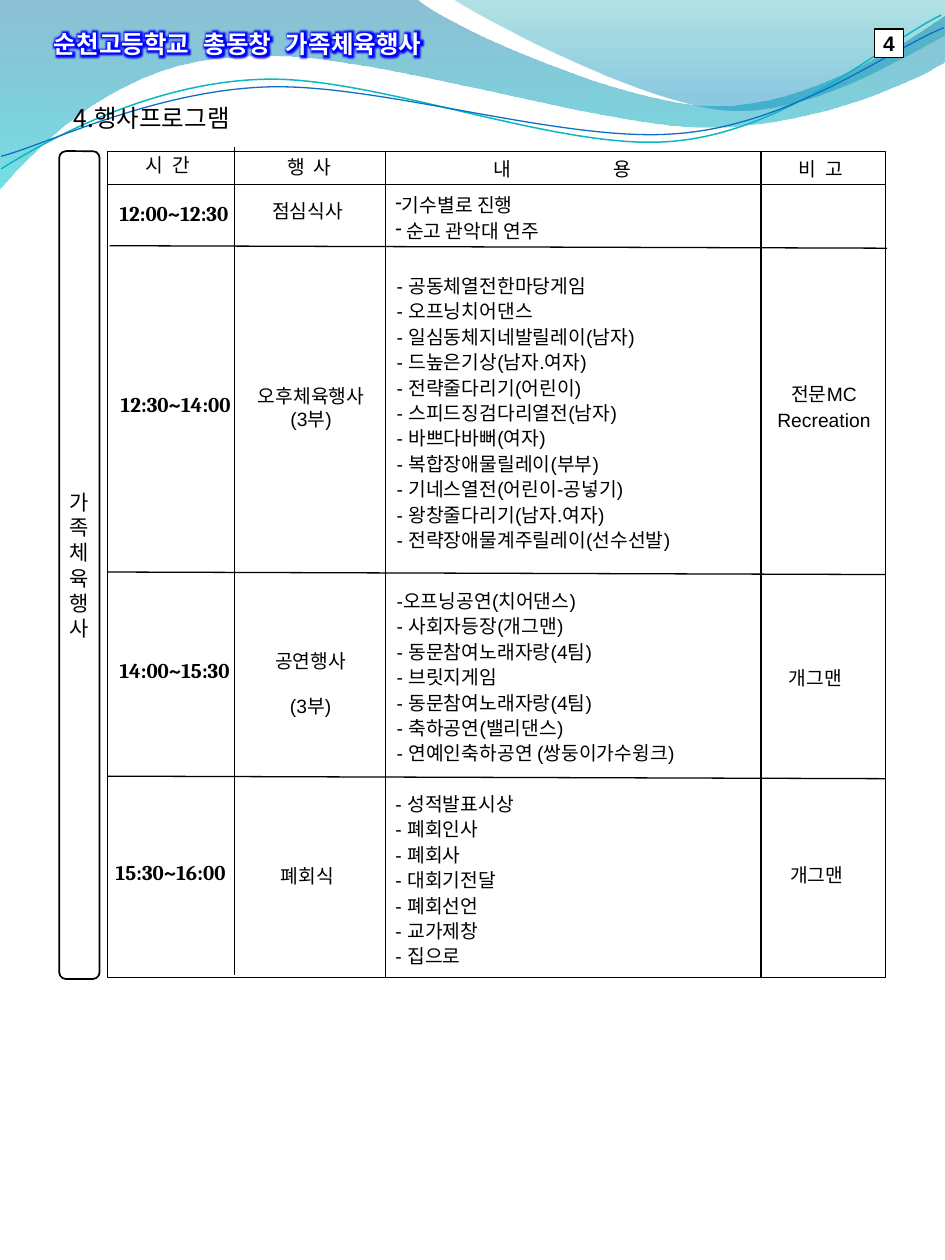
from copy import deepcopy
from dataclasses import dataclass

from lxml.etree import SubElement
from pptx import Presentation
from pptx.dml.color import RGBColor
from pptx.enum.shapes import MSO_CONNECTOR as Connector, MSO_SHAPE as Shape
from pptx.enum.text import MSO_ANCHOR as Anchor, PP_ALIGN as Align
from pptx.oxml import parse_xml
from pptx.oxml.ns import nsdecls, qn
from pptx.util import Inches, Pt


@dataclass(frozen=True)
class Theme:
    """Colours, fonts and type sizes of the programme page."""
    black: str = "000000"
    white: str = "FFFFFF"
    glow: str = "0000FF"
    teal: str = "0AB8BF"
    blue: str = "0F6FC6"
    sans: str = "Arial"
    serif: str = "Cambria"
    hangul: str = "Noto Sans CJK KR"
    side: str = "Lato"
    title: float = 14
    label: float = 12
    body: float = 11
    loose: float = 1.1


THEME = Theme()

BANDS = [
    ([(0, -0.01), [(3.3, -0.01)], [(3.57, 0.22), (4.98, 0.84), (5.69, 0.84)],
      [(6.4, 0.84), (7.19, 0.34), (7.5, 0.12)], [(7.51, 0.48)],
      [(7.38, 0.58), (6.52, 1.01), (5.59, 1.01)],
      [(4.66, 1), (2.86, 0.37), (1.93, 0.45)],
      [(0.97, 0.47), (0.34, 1.11), (-0.01, 1.51)], [(0, -0.01)]],
     [(0, "0074A1", 45), (1, "00C6CF", 55)]),
    ([(3.59, -0.01), [(3.82, 0.15), (5.11, 0.82), (5.77, 0.87)],
      [(6.42, 0.92), (7.21, 0.43), (7.5, 0.28)], [(7.5, 0)], [(3.59, -0.01)]],
     [(0, "00A1A9", 30), (0.8, "008BBF", 45)]),
]

WAVES = [
    ([(0.01, 1.34), [(0.36, 1.12), (1.18, 0.66), (2.07, 0.63)],
      [(2.96, 0.59), (4.45, 1.21), (5.35, 1.12)],
      [(6.26, 1.04), (7.03, 0.33), (7.47, 0.12)]], THEME.teal, 0.85),
    ([(0.01, 1.24), [(0.36, 1.15), (1.22, 0.72), (2.12, 0.69)],
      [(3.02, 0.66), (4.49, 1.14), (5.38, 1.06)],
      [(6.28, 0.99), (7.05, 0.4), (7.49, 0.22)]], THEME.blue, 0.75),
]

RULES = [((0, 0.26), (6.18, 0.26), 0.25), ((0.02, 0.75), (6.19, 0.77), 0.75),
         ((0, 3.34), (6.18, 3.36), 0.75), ((0, 4.96), (6.18, 4.98), 0.75),
         ((1.01, -0.03), (1.01, 6.54), 0.75), ((2.21, 0), (2.21, 6.56), 0.75),
         ((5.19, 0), (5.19, 6.56), 0.75)]
HEADERS = [((0.21, -0.03, 0.63, 0.29), "시 간", 2.6, None),
           ((1.33, -0.02, 0.63, 0.29), "행 사", 2.6, None),
           ((2.97, -0.02, 1.94, 0.31), "내 용", 56, THEME.loose),
           ((5.39, -0.02, 0.63, 0.31), "비 고", 2.6, THEME.loose)]
TIMES = [((0, 0.34), "12:00~12:30"), ((0.01, 1.86), "12:30~14:00"),
         ((0, 3.97), "14:00~15:30"), ((-0.03, 5.57), "15:30~16:00")]
NOTES = [((1.13, 0.33, 1.28, 0.29), "점심식사", 0.18, None),
         ((1.2, 5.61, 1.28, 0.29), "폐회식", 0.18, None),
         ((5.19, 4.02, 1.28, 0.52), "개그맨", 0.22, THEME.loose),
         ((5.2, 5.58, 1.28, 0.52), "개그맨", 0.22, THEME.loose)]
CONTENTS = [
    ((2.2, 0.91, 3.28, 3.22),
     "- 공동체열전한마당게임\n- 오프닝치어댄스\n- 일심동체지네발릴레이(남자)\n"
     "- 드높은기상(남자.여자)\n- 전략줄다리기(어린이)\n- 스피드징검다리열전(남자)\n"
     "- 바쁘다바뻐(여자)\n- 복합장애물릴레이(부부)\n- 기네스열전(어린이-공넣기)\n"
     "- 왕창줄다리기(남자.여자)\n- 전략장애물계주릴레이(선수선발)"),
    ((2.2, 3.41, 3.28, 1.56),
     "-오프닝공연(치어댄스)\n- 사회자등장(개그맨)\n- 동문참여노래자랑(4팀)\n"
     "- 브릿지게임\n- 동문참여노래자랑(4팀)\n- 축하공연(밸리댄스)\n"
     "- 연예인축하공연 (쌍둥이가수윙크)"),
    ((2.19, 5.02, 3.28, 1.77),
     "- 성적발표시상\n- 폐회인사\n- 폐회사\n- 대회기전달\n- 폐회선언\n- 교가제창\n- 집으로"),
]


def apply(target, **values):
    """Set each named attribute on the target."""
    for name, value in values.items():
        setattr(target, name, value)


def write(frame, lines, size=THEME.body, font=THEME.sans, color=THEME.black,
          bold=False, align=Align.LEFT, leading=None, gap=0):
    """Write one paragraph per entry, widening its spaces by the gap."""
    for index, line in enumerate(lines):
        para = frame.paragraphs[0] if index == 0 else frame.add_paragraph()
        apply(para, alignment=align, line_spacing=leading)
        if gap:
            for part in line.replace(" ", "| |").split("|"):
                para.add_run().text = part
        else:
            para.text = line
        for span in para.runs:
            apply(span.font, size=Pt(size), name=font, bold=bold)
            span.font.color.rgb = RGBColor.from_string(color)
            if gap and span.text == " ":
                span.font._element.set("spc", str(round(gap * 100)))
        for line_break in para._p.findall(qn("a:br")):
            line_break.append(deepcopy(para.runs[0].font._element))
    return frame.paragraphs


def outline(shape, color, width):
    """Give a shape a plain line and no shadow."""
    shape.shadow.inherit = False
    shape.line.color.rgb = RGBColor.from_string(color)
    shape.line.width = Pt(width)


def trace(page, steps):
    """Draw straight and Bezier steps as one freeform."""
    start, *segments = steps
    points = [(Inches(x), Inches(y)) for segment in segments for x, y in segment]
    builder = page.shapes.build_freeform(*map(Inches, start))
    builder.add_line_segments(points, close=steps[-1][-1] == start)
    shape = builder.convert_to_shape()
    nodes = iter(shape._element.xpath(".//a:path/a:lnTo"))
    for segment in segments:
        group = [next(nodes) for _ in segment]
        if len(group) == 3:
            curve = parse_xml(f'<a:cubicBezTo {nsdecls("a")}/>')
            group[0].addprevious(curve)
            for node in group:
                curve.append(node[0])
                node.getparent().remove(node)
    shape.shadow.inherit = False
    return shape


def add_backdrop(page):
    """Draw the translucent bands and the two wave lines."""
    for steps, stops in BANDS:
        band = trace(page, steps)
        band.line.fill.background()
        band.fill.gradient()
        band.fill.gradient_angle = 270
        for stop, (position, color, _) in zip(band.fill.gradient_stops, stops):
            stop.position = position
            stop.color.rgb = RGBColor.from_string(color)
        for node, (_, _, opacity) in zip(band._element.xpath(".//a:gs/a:srgbClr"), stops):
            SubElement(node, qn("a:alpha"), val=str(opacity * 1000))
    for steps, color, width in WAVES:
        wave = trace(page, steps)
        wave.fill.background()
        outline(wave, color, width)


def add_text(page, box, lines, left=0.1, right=0.1, **style):
    """Place a wrapping text box and return its paragraphs."""
    frame = page.shapes.add_textbox(*map(Inches, box)).text_frame
    apply(frame, word_wrap=True, margin_left=Inches(left), margin_right=Inches(right))
    return write(frame, lines, **style)


def add_title(page, box):
    """Place the glowing event title."""
    para, = add_text(page, box, ["순천고등학교 총동창 가족체육행사"], size=THEME.title,
                     font=THEME.hangul, color=THEME.white, bold=True, gap=5)
    for fill in para._p.xpath(".//a:rPr/a:solidFill"):
        fill.addnext(parse_xml(
            f'<a:effectLst {nsdecls("a")}><a:glow rad="101600">'
            f'<a:srgbClr val="{THEME.glow}"/></a:glow></a:effectLst>'))


def add_panel(page, box, kind, width, lines=(), **style):
    """Place a white outlined panel with centred text."""
    panel = page.shapes.add_shape(kind, *map(Inches, box))
    panel.fill.solid()
    panel.fill.fore_color.rgb = RGBColor.from_string(THEME.white)
    outline(panel, THEME.black, width)
    apply(panel.text_frame, word_wrap=False, vertical_anchor=Anchor.MIDDLE)
    write(panel.text_frame, lines, align=Align.CENTER, **style)
    return panel


def add_heading(page, box):
    """Place the section heading in a clear rounded box."""
    panel = add_panel(page, box, Shape.ROUNDED_RECTANGLE, 1, ["4.행사프로그램"],
                      size=THEME.title, font=THEME.hangul)
    panel.fill.background()
    panel.line.fill.background()


def add_programme(page, box):
    """Draw the ruled timetable and its texts inside the box."""
    left, top, _, _ = box

    def place(x, y, *size):
        return left + x, top + y, *size

    add_panel(page, box, Shape.RECTANGLE, 0.25)
    for start, end, width in RULES:
        ends = map(Inches, (*place(*start), *place(*end)))
        rule = page.shapes.add_connector(Connector.STRAIGHT, *ends)
        rule.line.color.rgb = RGBColor.from_string(THEME.black)
        rule.line.width = Pt(width)
        SubElement(rule._element.spPr, qn("a:effectLst"))
    for area, text, gap, leading in HEADERS:
        add_text(page, place(*area), [text], gap=gap, leading=leading)
    for corner, text in TIMES:
        add_text(page, place(*corner, 1.09, 0.52), [text], size=THEME.label,
                 font=THEME.serif, bold=True)
    for area, text, inset, leading in NOTES:
        add_text(page, place(*area), [text], left=inset, leading=leading)
    add_text(page, place(1.05, 1.8, 1.28, 0.48), ["오후체육행사\n(3부)"], right=0.24,
             align=Align.CENTER)
    show = add_text(page, place(1.19, 3.9, 0.87, 0.48), ["공연행사", "(3부)"],
                    left=0.08, align=Align.CENTER)
    show[1].space_before = Pt(13)
    add_text(page, place(5.21, 1.77, 1.28, 1.14), ["전문MC\nRecreation"], left=0,
             right=0.32, align=Align.CENTER, leading=THEME.loose)
    lunch = add_text(page, place(2.19, 0.27, 3.2, 0.51),
                     ["기수별로 진행", " 순고 관악대 연주"],
                     align=Align.JUSTIFY, leading=THEME.loose)
    for para in lunch:
        SubElement(para._p.get_or_add_pPr(), qn("a:buChar"), char="-")
    for area, text in CONTENTS:
        add_text(page, place(*area), [text], leading=THEME.loose)


def main():
    """Build and save the programme page."""
    deck = Presentation()
    apply(deck, slide_width=Inches(7.5), slide_height=Inches(10))
    page = deck.slides.add_slide(deck.slide_layouts[6])
    add_backdrop(page)
    add_title(page, (0.33, 0.18, 7, 0.34))
    add_panel(page, (6.94, 0.23, 0.23, 0.23), Shape.RECTANGLE, 0.75, ["4"],
              size=THEME.label, bold=True)
    add_panel(page, (0.47, 1.2, 0.32, 6.57), Shape.ROUNDED_RECTANGLE, 1,
              list("가족체육행사"), size=THEME.label, font=THEME.side)
    add_programme(page, (0.85, 1.2, 6.18, 6.56))
    add_heading(page, (0.18, 0.78, 2.05, 0.31))
    deck.save("out.pptx")


if __name__ == "__main__":
    main()
